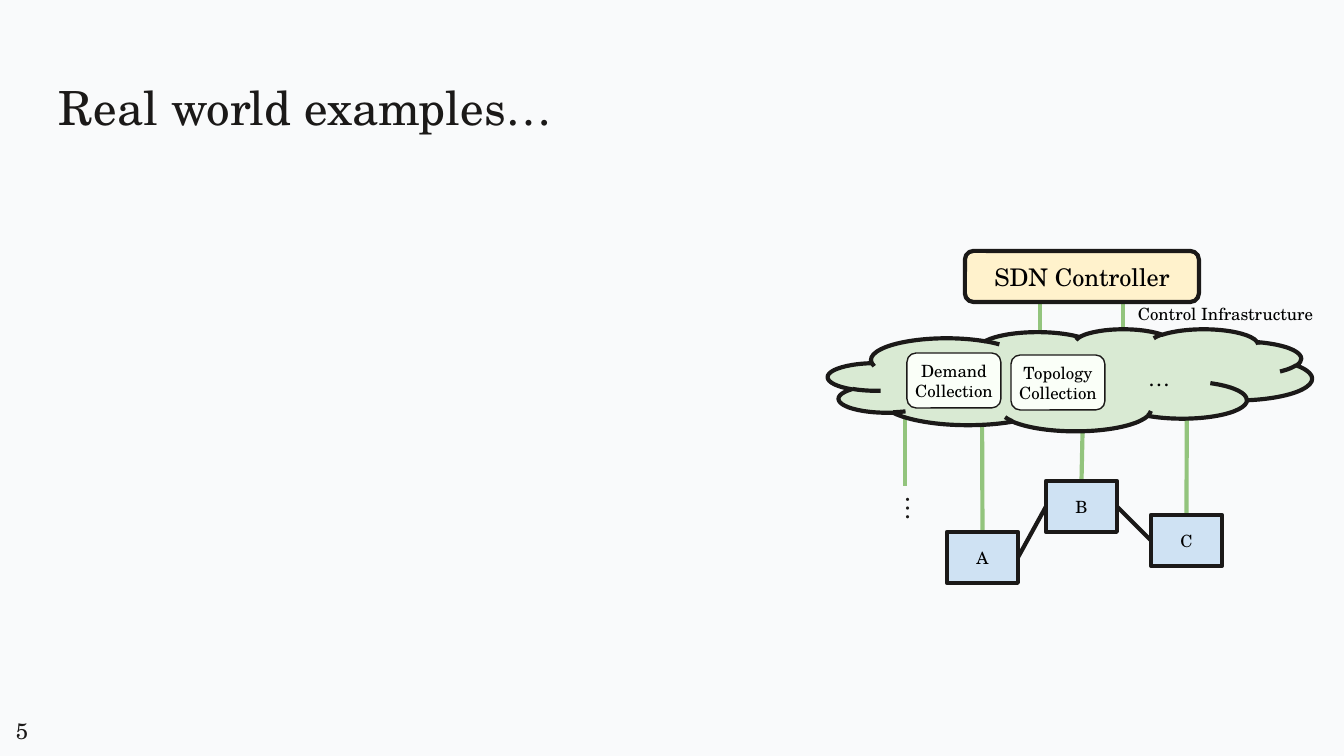
from lxml.etree import SubElement
from pptx import Presentation
from pptx.dml.color import RGBColor
from pptx.enum.shapes import MSO_CONNECTOR, MSO_SHAPE
from pptx.enum.text import MSO_ANCHOR as Anchor, PP_ALIGN as Align
from pptx.oxml.ns import qn
from pptx.util import Inches, Pt

PX = Inches(1) / 134.4
FONT = "TeX Gyre Schola"
COLORS = {
    "page": "F9FAFB", "ink": "1B1918", "black": "000000", "link": "93C47D",
    "switch": "CFE2F3", "cloud": "D9EAD3", "controller": "FFF2CC", "service": "FAFFF8",
}
INSET = 13

# Text, box (left, top, width, height), size, colour, alignment, rotation
TITLE = ("Real world examples…", (46, 66, 1253, 85), 25.2, "ink", Align.LEFT, 0)
PAGE_NUMBER = ("5", (3, 704, 69, 47), 12, "ink", Align.LEFT, 0)
MORE_SWITCHES = ("…", (866, 474, 89, 70), 14, "ink", Align.CENTER, 90)
MORE_SERVICES = ("…", (1133, 351, 52, 54), 12, "black", Align.CENTER, 0)
CLOUD_LABEL = ("Control Infrastructure", (1125, 294, 207, 47), 9, "black", Align.LEFT, 0)

CLOUD = (828, 329, 484, 102)
CONTROLLER = ("SDN Controller", (965, 251, 234, 51))
SERVICES = [("Demand Collection", (907, 353)), ("Topology Collection", (1011, 355))]
SERVICE_SIZE = (94, 55)
SWITCHES = {"A": (947, 532), "B": (1046, 481), "C": (1151, 515)}
SWITCH_SIZE = (71, 51)
SWITCH_LINKS = [("A", "B"), ("B", "C")]
CONTROL_LINKS = [
    ((905, 411), (905, 486)),
    ((1040, 302), (1040, 335)),
    ((1123, 301), (1123, 329)),
]
CLOUD_EXITS = {"A": (982, 390), "B": (1083, 411), "C": (1187, 366)}


def px(*lengths):
    return [round(length * PX) for length in lengths]


def color(name):
    return RGBColor.from_string(COLORS[name])


def write(shape, text, size, ink, align, anchor, side=INSET):
    frame = shape.text_frame
    frame.word_wrap = True
    frame.vertical_anchor = anchor
    frame.margin_left, frame.margin_right = px(side, side)
    frame.margin_top, frame.margin_bottom = px(INSET, INSET)
    para = frame.paragraphs[0]
    para.text = text
    para.alignment = align
    para.font.name = FONT
    para.font.size = Pt(size)
    para.font.color.rgb = color(ink)


def add_text(page, text, box, size, ink, align, rotation):
    shape = page.shapes.add_textbox(*px(*box))
    shape.rotation = rotation
    write(shape, text, size, ink, align, Anchor.TOP)


def add_node(page, kind, box, fill, text="", size=9, weight=2.25, side=INSET):
    shape = page.shapes.add_shape(kind, *px(*box))
    shape.shadow.inherit = False
    shape.fill.solid()
    shape.fill.fore_color.rgb = color(fill)
    shape.line.color.rgb = color("ink")
    shape.line.width = Pt(weight)
    if text:
        write(shape, text, size, "black", Align.CENTER, Anchor.MIDDLE, side)


def add_link(page, start, end, ink):
    link = page.shapes.add_connector(MSO_CONNECTOR.STRAIGHT, *px(*start, *end))
    link.line.color.rgb = color(ink)
    link.line.width = Pt(2.25)
    SubElement(link._element.spPr, qn("a:effectLst"))


def main():
    deck = Presentation()
    deck.slide_width, deck.slide_height = px(1344, 756)
    page = deck.slides.add_slide(deck.slide_layouts[6])
    page.background.fill.solid()
    page.background.fill.fore_color.rgb = color("page")

    for item in (TITLE, PAGE_NUMBER):
        add_text(page, *item)

    width, height = SWITCH_SIZE
    for start, end in CONTROL_LINKS:
        add_link(page, start, end, "link")
    for name, (left, top) in SWITCHES.items():
        add_link(page, CLOUD_EXITS[name], (left + width / 2, top), "link")
    for name, corner in SWITCHES.items():
        add_node(page, MSO_SHAPE.RECTANGLE, corner + SWITCH_SIZE, "switch", name)
    for first, second in SWITCH_LINKS:
        (left, top), (next_left, next_top) = SWITCHES[first], SWITCHES[second]
        add_link(page, (left + width, top + height / 2),
                 (next_left, next_top + height / 2), "ink")

    add_node(page, MSO_SHAPE.CLOUD, CLOUD, "cloud")
    text, box = CONTROLLER
    add_node(page, MSO_SHAPE.ROUNDED_RECTANGLE, box, "controller", text, size=13)
    for text, corner in SERVICES:
        add_node(page, MSO_SHAPE.ROUNDED_RECTANGLE, corner + SERVICE_SIZE, "service",
                 text, weight=0.75, side=0)

    for item in (MORE_SWITCHES, MORE_SERVICES, CLOUD_LABEL):
        add_text(page, *item)
    deck.save("out.pptx")


if __name__ == "__main__":
    main()
